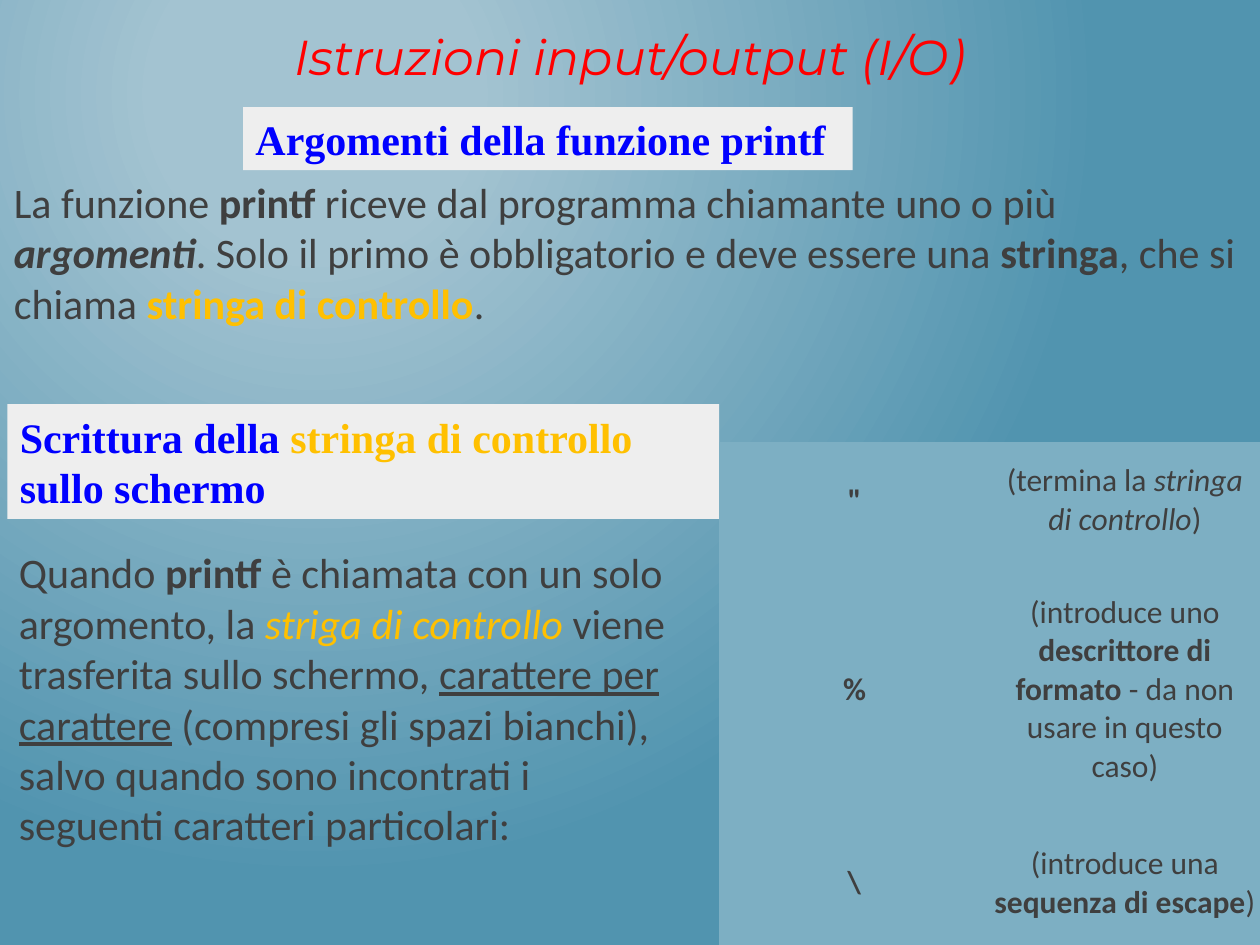
from lxml import etree
from pptx import Presentation
from pptx import util as u
from pptx.dml.color import RGBColor
from pptx.enum import shapes, text
from pptx.oxml.ns import qn

GREY, BLUE, GOLD, RED = "3F3F3F", "0000FF", "FFC000", "FF0000"
PANEL, CELL = "EEEEEE", "7DAFC3"


def rgb(value):
    return RGBColor.from_string(value)


def add_runs(p, parts, size, font, color):
    for words, style, *own in parts:
        r = p.add_run()
        r.text = words
        f = r.font
        f.size, f.name = u.Pt(size), font
        f.color.rgb = rgb(own[0] if own else color)
        f.bold, f.italic, f.underline = "b" in style, "i" in style, "u" in style


def background(s):
    fill = s.background.fill
    fill.gradient()
    for stop, color, pos in zip(fill.gradient_stops, ("A3C3D1", "5194AF"), (0.2, 1)):
        stop.color.rgb = rgb(color)
        stop.position = pos
    grad = s.background._cSld.find(".//" + qn("a:gradFill"))
    grad.remove(grad.find(qn("a:lin")))
    circle = etree.SubElement(grad, qn("a:path"), path="circle")
    etree.SubElement(circle, qn("a:fillToRect"), l="50000", t="20000", r="100000", b="100000")


def title(s, box, words):
    sp = s.shapes.title
    sp.left, sp.top, sp.width, sp.height = box
    tf = sp.text_frame
    tf.text = words
    tf.vertical_anchor = text.MSO_ANCHOR.TOP
    p = tf.paragraphs[0]
    p.alignment = text.PP_ALIGN.CENTER
    f = p.runs[0].font
    f.size, f.name, f.italic, f.bold = u.Pt(28), "Montserrat", True, False
    f.color.rgb = rgb(RED)


def heading(s, box, parts):
    sp = s.shapes.add_shape(shapes.MSO_SHAPE.RECTANGLE, *box)
    sp.shadow.inherit = False
    sp.fill.solid()
    sp.fill.fore_color.rgb = rgb(PANEL)
    sp.line.fill.background()
    tf = sp.text_frame
    tf.word_wrap = True
    tf.vertical_anchor = text.MSO_ANCHOR.MIDDLE
    p = tf.paragraphs[0]
    p.alignment = text.PP_ALIGN.LEFT
    add_runs(p, parts, 24, "Times New Roman", BLUE)


def paragraph(s, box, parts):
    tf = s.shapes.add_textbox(*box).text_frame
    tf.word_wrap = True
    add_runs(tf.paragraphs[0], parts, 24, "Calibri", GREY)


def characters(s, box, rows, heights):
    frame = s.shapes.add_table(len(rows), 2, *box)
    tbl = frame.table
    tbl.first_row = tbl.horz_banding = False
    for col in tbl.columns:
        col.width = box[2] // 2
    for i, (symbol, parts) in enumerate(rows):
        tbl.rows[i].height = heights[i]
        for j, content in enumerate(([(symbol, "b")], parts)):
            cell = tbl.cell(i, j)
            cell.fill.solid()
            cell.fill.fore_color.rgb = rgb(CELL)
            cell.vertical_anchor = text.MSO_ANCHOR.MIDDLE
            cell.margin_left = cell.margin_right = u.Cm(0.05)
            cell.margin_top = cell.margin_bottom = u.Cm(0.05)
            p = cell.text_frame.paragraphs[0]
            p.alignment = text.PP_ALIGN.CENTER
            add_runs(p, content, 18, "Calibri", GREY)
            for side in ("a:lnL", "a:lnR", "a:lnT", "a:lnB"):
                ln = etree.Element(qn(side), w="0")
                etree.SubElement(ln, qn("a:noFill"))
                pr = cell._tc.get_or_add_tcPr()
                pr.insert(len(pr) - 1, ln)


def cm(*lengths):
    return [u.Cm(n) for n in lengths]


def main():
    prs = Presentation()
    prs.slide_width, prs.slide_height = cm(25.4, 19.05)
    s = prs.slides.add_slide(prs.slide_layouts[5])
    background(s)
    title(s, cm(0, 0.41, 25.4, 1.73), "Istruzioni input/output (I/O)")
    heading(s, cm(4.9, 2.16, 12.29, 1.27), [("Argomenti della funzione printf", "b")])
    paragraph(s, cm(0.03, 3.43, 25.32, 3.33), [
        ("La funzione ", ""), ("printf", "b"),
        (" riceve dal programma chiamante uno o più ", ""), ("argomenti", "bi"),
        (". Solo il primo è obbligatorio e deve essere una ", ""), ("stringa", "b"),
        (", che si chiama ", ""), ("stringa di controllo", "b", GOLD), (".", "")])
    heading(s, cm(0.15, 8.15, 14.35, 2.31), [
        ("Scrittura della ", "b"), ("stringa di controllo ", "b", GOLD),
        ("sullo schermo", "b")])
    paragraph(s, cm(0.13, 10.9, 13.87, 7.44), [
        ("Quando ", ""), ("printf", "b"),
        (" è chiamata con un solo argomento, la ", ""),
        ("striga di controllo ", "i", GOLD),
        ("viene trasferita sullo schermo, ", ""), ("carattere per carattere", "u"),
        (" (compresi gli spazi bianchi), salvo quando sono incontrati i "
         "seguenti caratteri particolari:", "")])
    characters(s, cm(14.5, 8.92, 10.9, 10.13), [
        ('"', [("(termina la ", ""), ("stringa di controllo", "i"), (")", "")]),
        ("%", [("(introduce uno ", ""), ("descrittore di formato", "b"),
               (" - da non usare in questo caso)", "")]),
        ("\\", [("(introduce una ", ""), ("sequenza di escape", "b"), (")", "")]),
    ], cm(2.33, 5.3, 2.5))
    prs.save("out.pptx")


if __name__ == "__main__":
    main()
